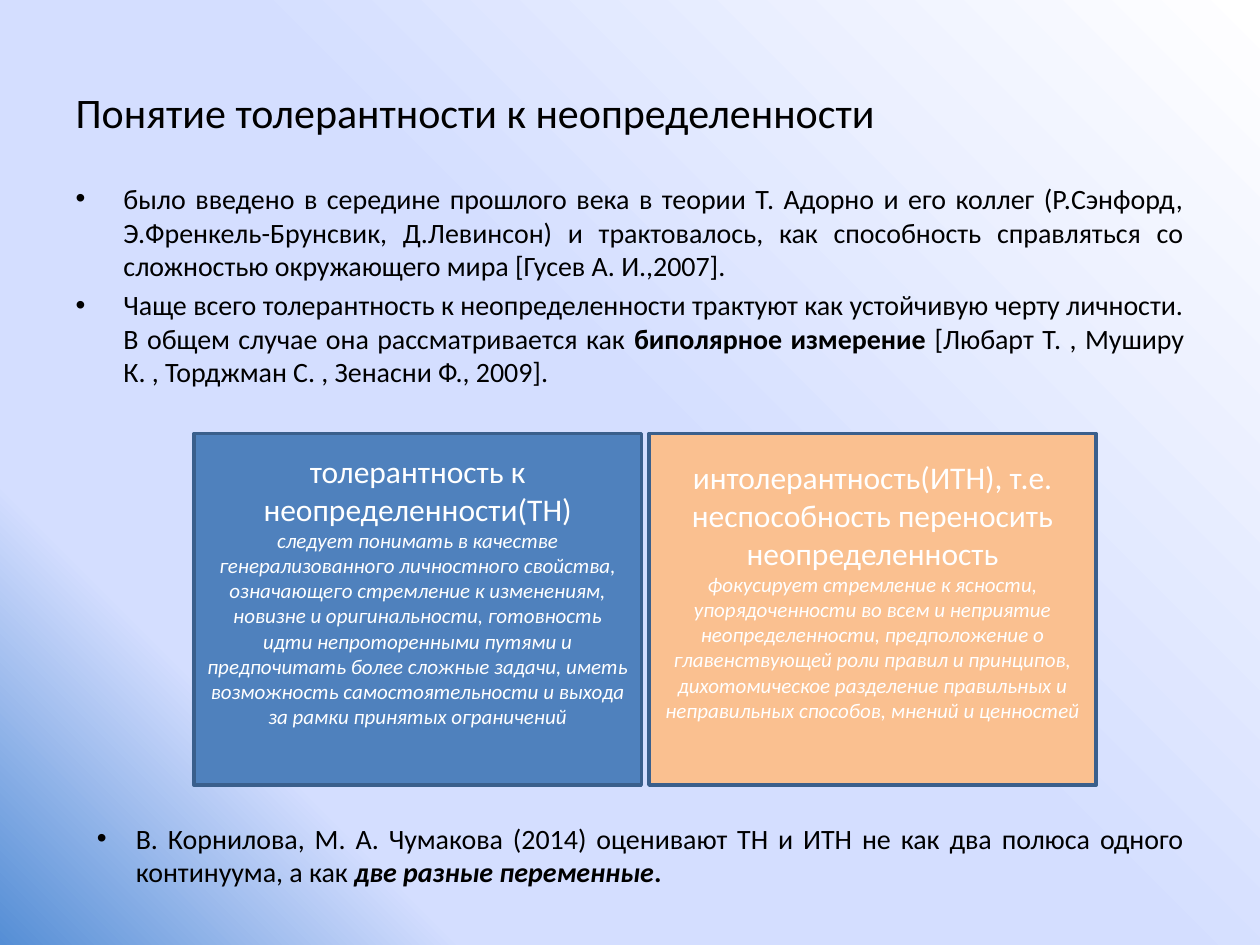
from copy import deepcopy
from dataclasses import dataclass

from lxml import etree
from pptx import Presentation
from pptx.dml.color import RGBColor
from pptx.enum.shapes import MSO_SHAPE
from pptx.enum.text import MSO_ANCHOR, MSO_AUTO_SIZE, PP_ALIGN
from pptx.oxml.ns import qn
from pptx.util import Inches, Pt

RECT = MSO_SHAPE.RECTANGLE
MIDDLE, TOP = MSO_ANCHOR.MIDDLE, MSO_ANCHOR.TOP
LEFT, CENTER, JUSTIFY = PP_ALIGN.LEFT, PP_ALIGN.CENTER, PP_ALIGN.JUSTIFY
NO_FIT = MSO_AUTO_SIZE.NONE


@dataclass(frozen=True)
class Theme:
    font: str = "Calibri"
    ink: str = "000000"
    light: str = "FFFFFF"
    blue: str = "4F81BD"
    peach: str = "FAC090"
    edge: str = "3A5F8C"
    glow: tuple = ((0, "558ED5"), (0.21, "D4DEFF"), (0.53, "D4DEFF"), (1, "FFFFFF"))
    title: int = 24
    head: int = 18
    body: int = 16
    note: int = 12


@dataclass(frozen=True)
class Card:
    head: str
    note: str
    fill: str


THEME = Theme()

TITLE = "Понятие толерантности к неопределенности"
ORIGIN = (
    "было введено в середине прошлого века в теории Т. Адорно и его коллег "
    "(Р.Сэнфорд, Э.Френкель-Брунсвик, Д.Левинсон) и трактовалось, как "
    "способность справляться со сложностью окружающего мира [Гусев А. И.,2007]."
)
TRAIT = (
    "Чаще всего толерантность к неопределенности трактуют как устойчивую черту "
    "личности. В общем случае она рассматривается как "
)
TRAIT_KEY = "биполярное измерение "
TRAIT_REF = "[Любарт Т. , Муширу К. , Торджман С. , Зенасни Ф., 2009]."
VIEW = (
    "В. Корнилова, М. А. Чумакова (2014) оценивают ТН и ИТН не как два полюса "
    "одного континуума, а как "
)
VIEW_KEY = "две разные переменные"

CARDS = (
    Card(
        "толерантность к неопределенности(ТН)",
        "следует понимать в качестве генерализованного личностного свойства, "
        "означающего стремление к изменениям, новизне и оригинальности, "
        "готовность идти непроторенными путями и предпочитать более сложные "
        "задачи, иметь возможность самостоятельности и выхода за рамки принятых "
        "ограничений",
        THEME.blue,
    ),
    Card(
        "интолерантность(ИТН), т.е. неспособность переносить неопределенность",
        "фокусирует стремление к ясности, упорядоченности во всем и неприятие "
        "неопределенности, предположение о главенствующей роли правил и "
        "принципов, дихотомическое разделение правильных и неправильных "
        "способов, мнений и ценностей",
        THEME.peach,
    ),
)
CARD_X, CARD_Y, CARD_W, CARD_H, CARD_GAP = 1.54, 3.44, 3.55, 2.79, 0.06


def rgb(code: str) -> RGBColor:
    return RGBColor.from_string(code)


def place(shape, x: float, y: float, w: float, h: float) -> None:
    shape.left, shape.top = Inches(x), Inches(y)
    shape.width, shape.height = Inches(w), Inches(h)


def write(para, text: str, *, size: int, color: str = THEME.ink,
          bold: bool = False, italic: bool = False, align=LEFT) -> None:
    """Add one formatted run to a paragraph."""
    para.alignment = align
    run = para.add_run()
    run.text = text
    font = run.font
    font.name, font.size = THEME.font, Pt(size)
    font.bold, font.italic = bold, italic
    font.color.rgb = rgb(color)


def bullet(para, indent: float) -> None:
    """Give a paragraph a hanging round bullet."""
    props = para._p.get_or_add_pPr()
    props.set("marL", str(Inches(indent)))
    props.set("indent", str(-Inches(indent)))
    etree.SubElement(props, qn("a:buFont"), typeface="Arial")
    etree.SubElement(props, qn("a:buChar"), char="•")


def paint(slide) -> None:
    """Fill the background with a diagonal gradient."""
    fill = slide.background.fill
    fill.gradient()
    fill.gradient_angle = 45
    stops = next(slide.element.iter(qn("a:gsLst")))
    for old in list(stops)[1:]:
        stops.remove(old)
    for _ in THEME.glow[1:]:
        stops.append(deepcopy(stops[0]))
    for stop, (spot, color) in zip(fill.gradient_stops, THEME.glow):
        stop.position = spot
        stop.color.rgb = rgb(color)


def draw_card(slide, card: Card, x: float) -> None:
    box = slide.shapes.add_shape(
        RECT, Inches(x), Inches(CARD_Y), Inches(CARD_W), Inches(CARD_H))
    box.shadow.inherit = False
    box.fill.solid()
    box.fill.fore_color.rgb = rgb(card.fill)
    box.line.color.rgb = rgb(THEME.edge)
    box.line.width = Pt(2)
    frame = box.text_frame
    frame.word_wrap = True
    frame.vertical_anchor = MIDDLE
    frame.margin_bottom = Inches(0.35)
    write(frame.paragraphs[0], card.head, size=THEME.head,
          color=THEME.light, align=CENTER)
    write(frame.add_paragraph(), card.note, size=THEME.note,
          color=THEME.light, italic=True, align=CENTER)


def fill_body(body) -> None:
    place(body, 0.5, 1.39, 9, 5.31)
    frame = body.text_frame
    frame.auto_size = NO_FIT
    frame.vertical_anchor = TOP
    first, second = frame.paragraphs[0], frame.add_paragraph()
    for para in (first, second):
        bullet(para, 0.38)
    look = {"size": THEME.body, "align": JUSTIFY}
    write(first, ORIGIN, **look)
    write(second, TRAIT, **look)
    write(second, TRAIT_KEY, bold=True, **look)
    write(second, TRAIT_REF, **look)


def draw_view(slide) -> None:
    box = slide.shapes.add_textbox(
        Inches(0.67), Inches(6.47), Inches(8.83), Inches(0.64))
    box.text_frame.word_wrap = True
    para = box.text_frame.paragraphs[0]
    bullet(para, 0.31)
    look = {"size": THEME.body, "align": JUSTIFY}
    write(para, VIEW, **look)
    write(para, VIEW_KEY, bold=True, italic=True, **look)
    write(para, ".", bold=True, **look)


def main() -> None:
    deck = Presentation()
    deck.slide_width, deck.slide_height = Inches(10), Inches(7.5)
    slide = deck.slides.add_slide(deck.slide_layouts[1])
    paint(slide)
    title, body = slide.placeholders
    place(title, 0.5, 0.3, 9, 1.17)
    title.text_frame.auto_size = NO_FIT
    title.text_frame.vertical_anchor = MIDDLE
    write(title.text_frame.paragraphs[0], TITLE, size=THEME.title)
    fill_body(body)
    for i, card in enumerate(CARDS):
        draw_card(slide, card, CARD_X + i * (CARD_W + CARD_GAP))
    draw_view(slide)
    deck.save("out.pptx")


if __name__ == "__main__":
    main()
